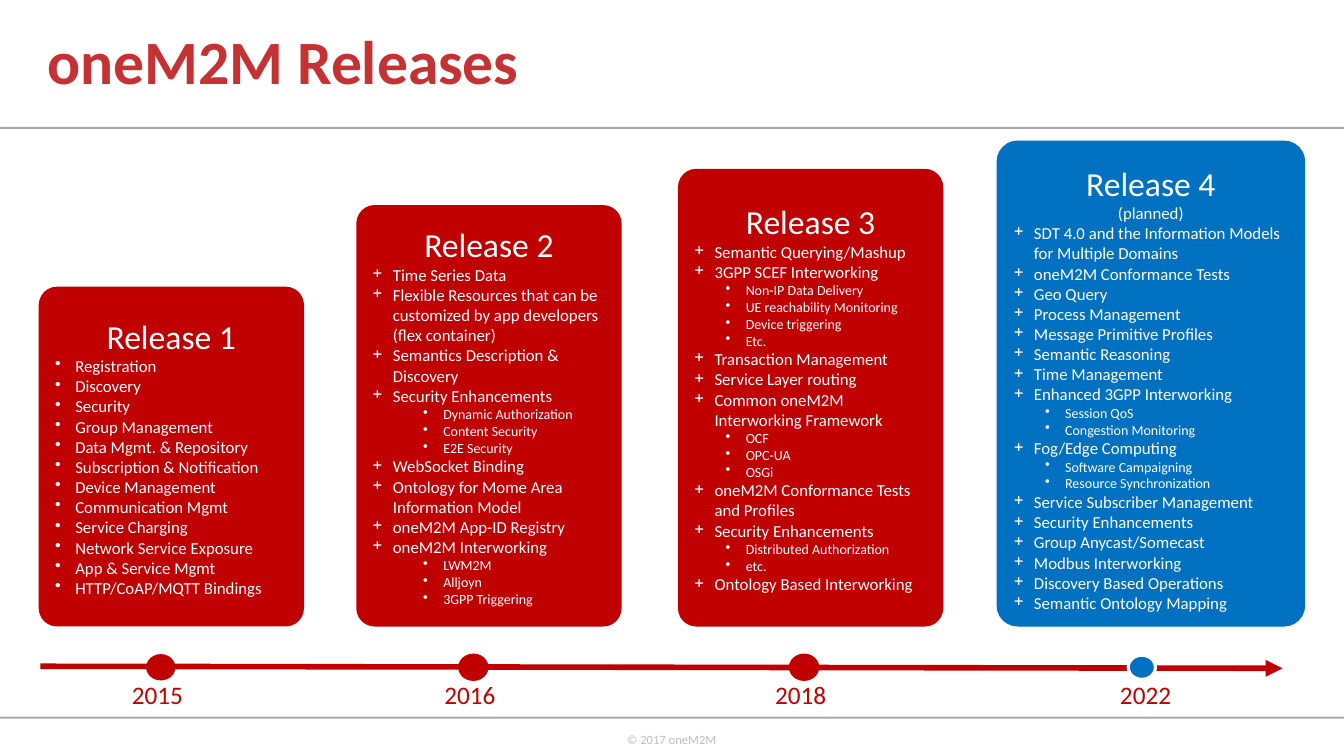
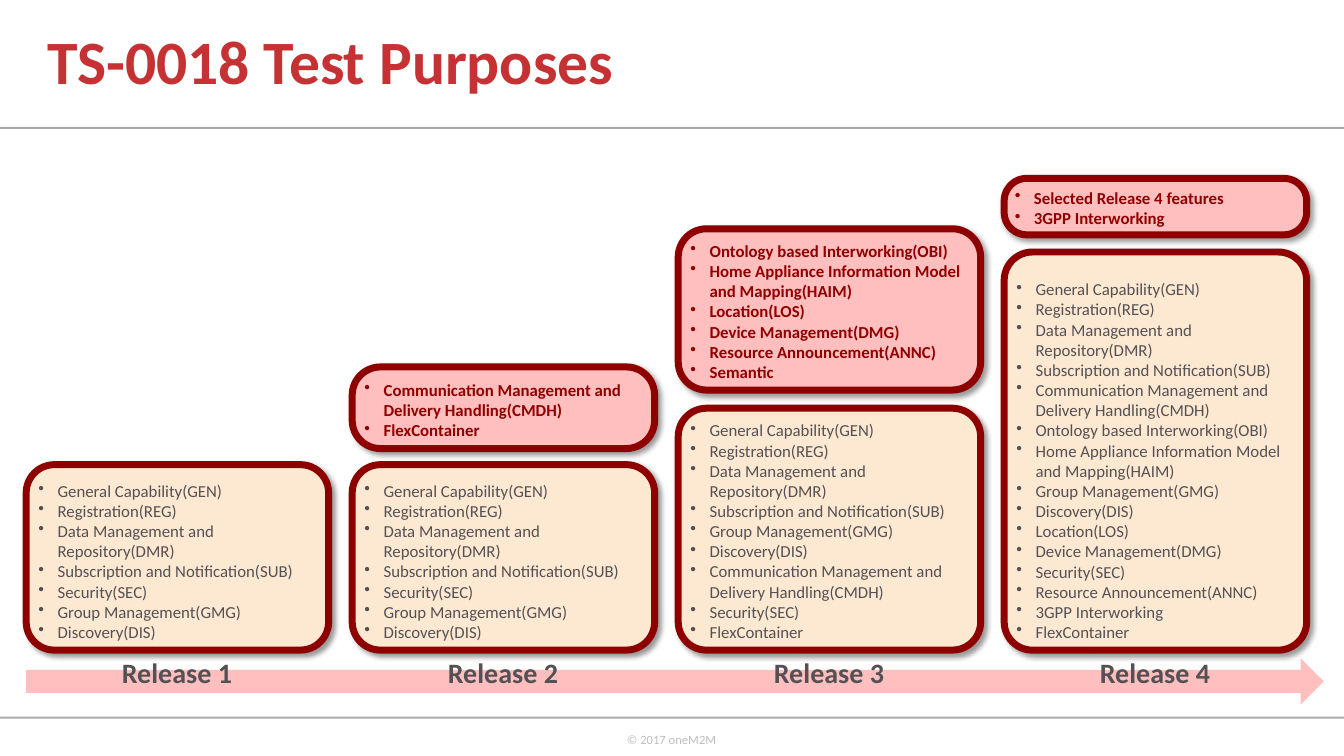
from dataclasses import dataclass

import pptx
import pptx.dml.color
import pptx.enum.shapes
import pptx.enum.text
import pptx.oxml.ns
import pptx.util
from lxml import etree

Inches = pptx.util.Inches
Pt = pptx.util.Pt
Shape = pptx.enum.shapes.MSO_SHAPE
Anchor = pptx.enum.text.MSO_ANCHOR
Align = pptx.enum.text.PP_ALIGN
qn = pptx.oxml.ns.qn

FONT = "Calibri"
TITLE_RED, RELEASE_RED, PLANNED_BLUE = "C63133", "C00000", "0070C0"
RULE_GREY, FOOTER_GREY, TEXT_GREY = "A7A9AC", "BFBFBF", "545054"
DARK_RED, NEW_RED, PINK, CREAM, WHITE = "8E0000", "900000", "FFBFBF", "FDE9D2", "FFFFFF"

SLIDE_WIDTH, SLIDE_HEIGHT = 13.33, 7.5
CARD_BOTTOM = 6.2
COLUMN_LEFT, COLUMN_WIDTH, COLUMN_PITCH, COLUMN_BOTTOM = 0.26, 3, 9.7 / 3, 6.45
COLUMN_RADIUS = 0.28


@dataclass
class Release:
    """A card; a tuple among its features holds the sub-points of the one before."""
    heading: str
    left: float
    top: float
    features: list
    bullet: str = "+"
    sub_indent: float = 0.51
    width: float = 2.6
    color: str = RELEASE_RED
    top_inset: float = 0.05


@dataclass
class Milestone:
    year: str
    label_left: float
    dot_left: float
    fill: str = RELEASE_RED
    outline: str = RELEASE_RED
    outline_width: float = 2.25


@dataclass
class TestColumn:
    """Carried-over test purposes, with the newly added ones in a box above."""
    label: str
    top: float
    purposes: list
    added_top: float = 0
    added_height: float = 0
    added: tuple = ()


RELEASES = [
    Release("Release 1", 0.4, 2.86, [
        "Registration", "Discovery", "Security", "Group Management",
        "Data Mgmt. & Repository", "Subscription & Notification",
        "Device Management", "Communication Mgmt", "Service Charging",
        "Network Service Exposure", "App & Service Mgmt", "HTTP/CoAP/MQTT Bindings",
    ], bullet="•"),
    Release("Release 2", 3.55, 2.05, [
        "Time Series Data",
        "Flexible Resources that can be customized by app developers (flex container)",
        "Semantics Description & Discovery", "Security Enhancements",
        ("Dynamic Authorization", "Content Security", "E2E Security"),
        "WebSocket Binding", "Ontology for Mome Area Information Model",
        "oneM2M App-ID Registry", "oneM2M Interworking",
        ("LWM2M", "Alljoyn", "3GPP Triggering"),
    ], sub_indent=0.7),
    Release("Release 3", 6.74, 1.69, [
        "Semantic Querying/Mashup", "3GPP SCEF Interworking",
        ("Non-IP Data Delivery", "UE reachability Monitoring", "Device triggering", "Etc."),
        "Transaction Management", "Service Layer routing",
        "Common oneM2M Interworking Framework",
        ("OCF", "OPC-UA", "OSGi"),
        "oneM2M Conformance Tests and Profiles", "Security Enhancements",
        ("Distributed Authorization", "etc."),
        "Ontology Based Interworking",
    ]),
    Release("Release 4\n(planned)", 9.9, 1.41, [
        "SDT 4.0 and the Information Models for Multiple Domains",
        "oneM2M Conformance Tests", "Geo Query", "Process Management",
        "Message Primitive Profiles", "Semantic Reasoning", "Time Management",
        "Enhanced 3GPP Interworking",
        ("Session QoS", "Congestion Monitoring"),
        "Fog/Edge Computing",
        ("Software Campaigning", "Resource Synchronization"),
        "Service Subscriber Management", "Security Enhancements",
        "Group Anycast/Somecast", "Modbus Interworking",
        "Discovery Based Operations", "Semantic Ontology Mapping",
    ], width=3.03, color=PLANNED_BLUE, top_inset=0.13),
]

MILESTONES = [
    Milestone("2015", 1.21, 1.46, outline_width=1.5),
    Milestone("2016", 4.31, 4.56),
    Milestone("2018", 7.59, 7.84),
    Milestone("2022", 11.01, 11.19, PLANNED_BLUE, WHITE),
]

SECURITY, GROUPS, DISCOVERY = "Security(SEC)", "Group Management(GMG)", "Discovery(DIS)"
DELIVERY = "Communication Management and Delivery Handling(CMDH)"
ONTOLOGY = "Ontology based Interworking(OBI)"
APPLIANCES = "Home Appliance Information Model and Mapping(HAIM)"
LOCATION, DEVICES = "Location(LOS)", "Device Management(DMG)"
ANNOUNCEMENT = "Resource Announcement(ANNC)"
CONTAINER, CELLULAR = "FlexContainer", "3GPP Interworking"
CORE = ["General Capability(GEN)", "Registration(REG)",
        "Data Management and Repository(DMR)", "Subscription and Notification(SUB)"]
FIRST_PURPOSES = CORE + [SECURITY, GROUPS, DISCOVERY]

TEST_COLUMNS = [
    TestColumn("Release 1", 4.61, FIRST_PURPOSES),
    TestColumn("Release 2", 4.61, FIRST_PURPOSES, 3.64, 0.81, (DELIVERY, CONTAINER)),
    TestColumn("Release 3", 4.05,
               CORE + [GROUPS, DISCOVERY, DELIVERY, SECURITY, CONTAINER], 2.27, 1.6,
               (ONTOLOGY, APPLIANCES, LOCATION, DEVICES, ANNOUNCEMENT, "Semantic")),
    TestColumn("Release 4", 2.5,
               CORE + [DELIVERY, ONTOLOGY, APPLIANCES, GROUPS, DISCOVERY, LOCATION,
                       DEVICES, SECURITY, ANNOUNCEMENT, CELLULAR, CONTAINER], 1.77, 0.56,
               ("Selected Release 4 features", CELLULAR)),
]


def rgb(color: str):
    return pptx.dml.color.RGBColor.from_string(color)


def format_run(run, size: float, color: str, bold: bool = False) -> None:
    run.font.name = FONT
    run.font.size = Pt(size)
    run.font.bold = bold
    run.font.color.rgb = rgb(color)


def add_label(slide, text: str, left: float, top: float, width: float, height: float,
              size: float, color: str, bold: bool = False, wrap: bool = False):
    box = slide.shapes.add_textbox(Inches(left), Inches(top), Inches(width), Inches(height))
    box.text_frame.word_wrap = wrap
    box.text_frame.text = text
    format_run(box.text_frame.paragraphs[0].runs[0], size, color, bold)
    return box


def add_block(slide, kind, left: float, top: float, width: float, height: float,
              fill: str, outline: str = "", outline_width: float = 0):
    block = slide.shapes.add_shape(kind, Inches(left), Inches(top), Inches(width), Inches(height))
    block.shadow.inherit = False
    block.fill.solid()
    block.fill.fore_color.rgb = rgb(fill)
    if outline:
        block.line.color.rgb = rgb(outline)
        block.line.width = Pt(outline_width)
    else:
        block.line.fill.background()
    return block


def set_insets(frame, left: float, top: float, right: float, bottom: float) -> None:
    frame.margin_left, frame.margin_top = Inches(left), Inches(top)
    frame.margin_right, frame.margin_bottom = Inches(right), Inches(bottom)


def write_bullet(paragraph, text: str, bullet: str, indent: float, hanging: float,
                 size: float, color: str, bold: bool = False) -> None:
    properties = paragraph._p.get_or_add_pPr()
    properties.set("marL", str(Inches(indent)))
    properties.set("indent", str(-Inches(hanging)))
    etree.SubElement(properties, qn("a:buChar")).set("char", bullet)
    paragraph.alignment = Align.LEFT
    paragraph.text = text
    format_run(paragraph.runs[0], size, color, bold)


def add_soft_shadow(shape) -> None:
    effects = shape._element.spPr.find(qn("a:effectLst"))
    shadow = etree.SubElement(effects, qn("a:outerShdw"), blurRad=str(Pt(4)),
                              dist=str(Pt(3)), dir=str(45 * 60000), rotWithShape="0")
    color = etree.SubElement(shadow, qn("a:srgbClr"), val="000000")
    etree.SubElement(color, qn("a:alpha"), val="40000")


def add_titled_slide(deck, title: str):
    """Add a blank slide with the shared rules, footer and title."""
    slide = deck.slides.add_slide(deck.slide_layouts[6])
    for rule_top in (1.26, 7.11):
        add_block(slide, Shape.RECTANGLE, 0, rule_top, SLIDE_WIDTH, 0.02, RULE_GREY)
    add_label(slide, "© 2017 oneM2M", 6.12, 7.21, 1.1, 0.4, 9, FOOTER_GREY)
    heading = add_label(slide, title, 0.37, 0, 8.59, 1.28, 44, TITLE_RED, bold=True, wrap=True)
    heading.text_frame.vertical_anchor = Anchor.MIDDLE
    heading.text_frame.paragraphs[0].line_spacing = 0.9
    return slide


def add_release_card(slide, release: Release) -> None:
    card = add_block(slide, Shape.ROUNDED_RECTANGLE, release.left, release.top, release.width,
                     CARD_BOTTOM - release.top, release.color, release.color, 2.25)
    card.adjustments[0] = 0.064
    frame = card.text_frame
    frame.word_wrap = True
    frame.vertical_anchor = Anchor.MIDDLE
    set_insets(frame, 0.1, release.top_inset, 0.1, 0.05)
    heading = frame.paragraphs[0]
    heading.text = release.heading
    heading.alignment = Align.CENTER
    for run, size in zip(heading.runs, (24, 12)):
        format_run(run, size, WHITE)
    for feature in release.features:
        if isinstance(feature, str):
            write_bullet(frame.add_paragraph(), feature, release.bullet, 0.2, 0.2, 12, WHITE)
            continue
        for detail in feature:
            paragraph = frame.add_paragraph()
            paragraph.level = 2
            write_bullet(paragraph, detail, "•", release.sub_indent, 0.2, 10, WHITE)


def add_timeline(slide) -> None:
    timeline = slide.shapes.add_connector(pptx.enum.shapes.MSO_CONNECTOR.STRAIGHT, Inches(0.4),
                                          Inches(6.61), Inches(12.72), Inches(6.63))
    timeline.line.color.rgb = rgb(RELEASE_RED)
    timeline.line.width = Pt(4)
    properties = timeline._element.spPr
    etree.SubElement(properties.find(qn("a:ln")), qn("a:tailEnd"), type="triangle")
    etree.SubElement(properties, qn("a:effectLst"))
    for milestone in MILESTONES:
        add_label(slide, milestone.year, milestone.label_left, 6.69, 0.71, 0.4, 18, RELEASE_RED)
        add_block(slide, Shape.OVAL, milestone.dot_left, 6.5, 0.27, 0.24,
                  milestone.fill, milestone.outline, milestone.outline_width)


def add_purpose_box(slide, left: float, top: float, height: float, purposes,
                    fill: str, color: str, bold: bool = False) -> None:
    box = add_block(slide, Shape.ROUNDED_RECTANGLE, left, top, COLUMN_WIDTH, height,
                    fill, DARK_RED, 5)
    box.adjustments[0] = min(0.4, COLUMN_RADIUS / min(COLUMN_WIDTH, height))
    add_soft_shadow(box)
    frame = box.text_frame
    frame.word_wrap = True
    frame.vertical_anchor = Anchor.BOTTOM
    set_insets(frame, 0.04, 0, 0.04, 0)
    for index, purpose in enumerate(purposes):
        paragraph = frame.add_paragraph() if index else frame.paragraphs[0]
        write_bullet(paragraph, purpose, "•", 0.19, 0.19, 12, color, bold)


def build_releases(deck) -> None:
    slide = add_titled_slide(deck, "oneM2M Releases")
    for release in RELEASES:
        add_release_card(slide, release)
    add_timeline(slide)


def build_test_purposes(deck) -> None:
    slide = add_titled_slide(deck, "TS-0018 Test Purposes")
    add_block(slide, Shape.RIGHT_ARROW, COLUMN_LEFT, 6.53, 12.87, 0.46, PINK)
    for index, column in enumerate(TEST_COLUMNS):
        left = COLUMN_LEFT + index * COLUMN_PITCH
        add_purpose_box(slide, left, column.top, COLUMN_BOTTOM - column.top,
                        column.purposes, CREAM, TEXT_GREY)
        if column.added:
            add_purpose_box(slide, left, column.added_top, column.added_height,
                            column.added, PINK, NEW_RED, bold=True)
        add_label(slide, column.label, left + 0.85, COLUMN_BOTTOM, 1.31, 0.44,
                  20, TEXT_GREY, bold=True)


def main() -> None:
    deck = pptx.Presentation()
    deck.slide_width, deck.slide_height = Inches(SLIDE_WIDTH), Inches(SLIDE_HEIGHT)
    build_releases(deck)
    build_test_purposes(deck)
    deck.save("out.pptx")


if __name__ == "__main__":
    main()
